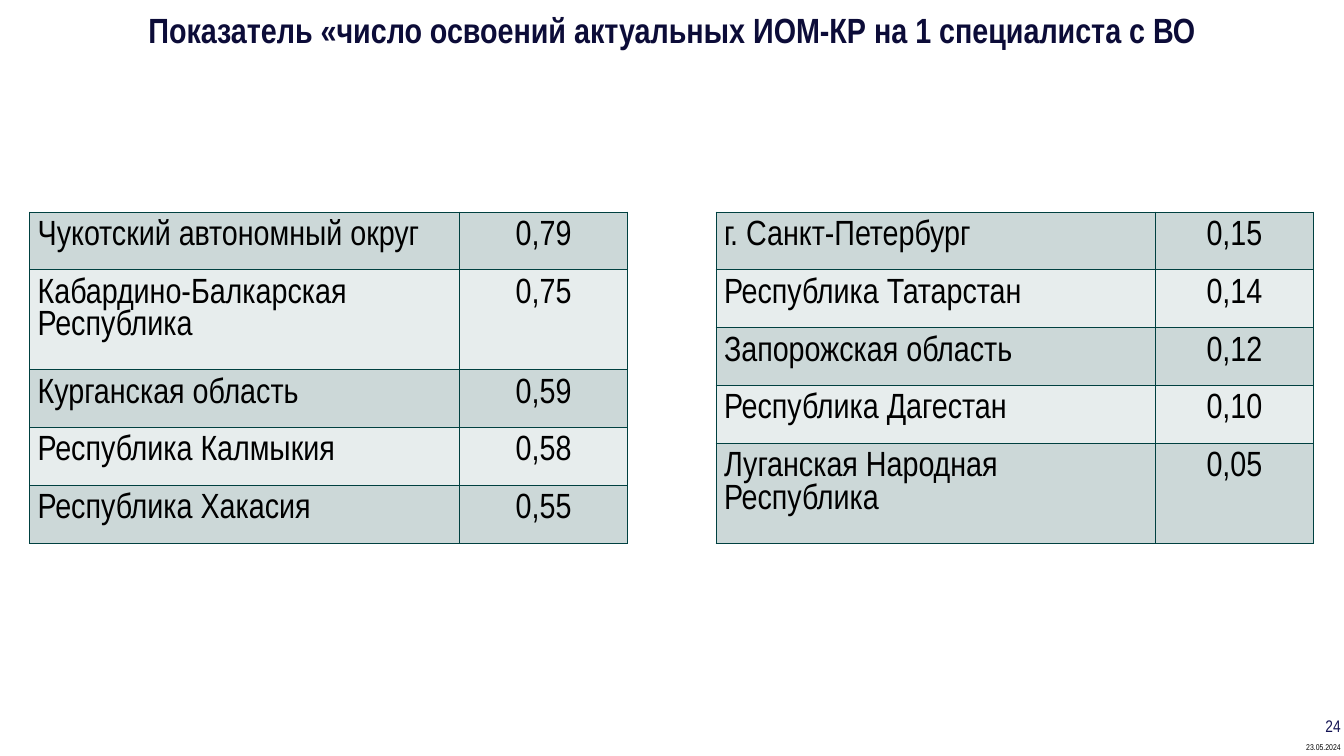
from lxml.etree import SubElement
from pptx import Presentation
from pptx.dml.color import RGBColor
from pptx.enum.text import MSO_ANCHOR, PP_ALIGN
from pptx.oxml.ns import qn
from pptx.util import Pt

COLORS = {"title": "0C0C38", "number": "131354", "text": "000000",
          "border": "004040", "odd": "CCD8D8", "even": "E7EDED"}
FONT = "Arial Narrow"
INSET = 5.67


def write(frame, text, size, color, align, bold=False):
    """Fill a text frame with one formatted paragraph."""
    frame.text = text
    paragraph = frame.paragraphs[0]
    paragraph.alignment = align
    font = paragraph.runs[0].font
    font.name, font.size, font.bold = FONT, Pt(size), bold
    font.color.rgb = RGBColor.from_string(COLORS[color])


def add_borders(cell):
    """Draw a thin line on all four sides; lines must precede the fill."""
    properties = cell._tc.get_or_add_tcPr()
    for side in ("a:lnL", "a:lnR", "a:lnT", "a:lnB"):
        line = SubElement(properties, qn(side), w=str(Pt(0.75)))
        fill = SubElement(line, qn("a:solidFill"))
        SubElement(fill, qn("a:srgbClr"), val=COLORS["border"])


prs = Presentation()
prs.slide_width, prs.slide_height = Pt(960), Pt(540)
slide = prs.slides.add_slide(prs.slide_layouts[6])

# Title, slide number and date: text, place, inset, bottom inset, style
labels = [
    ("Показатель «число освоений актуальных ИОМ‑КР на 1 специалиста с ВО",
     (12.24, 0, 935.28, 41.8), INSET, INSET, MSO_ANCHOR.MIDDLE, True,
     (25, "title", PP_ALIGN.CENTER, True)),
    ("24", (929.5, 508.3, 31, 17.3), 2.83, 0, MSO_ANCHOR.MIDDLE, True,
     (12, "number", PP_ALIGN.RIGHT)),
    ("23.05.2024", (929.5, 527, 31, 13), 2.83, 2.83, MSO_ANCHOR.TOP, False,
     (6, "text", PP_ALIGN.RIGHT)),
]
for text, place, inset, bottom, anchor, wrap, style in labels:
    frame = slide.shapes.add_textbox(*map(Pt, place)).text_frame
    frame.margin_left = frame.margin_right = frame.margin_top = Pt(inset)
    frame.margin_bottom = Pt(bottom)
    frame.vertical_anchor = anchor
    frame.word_wrap = wrap
    write(frame, text, *style)

# Leading regions on the left, trailing ones on the right
rankings = [
    (21.3, (307, 120), [
        ("Чукотский автономный округ", "0,79"),
        ("Кабардино-Балкарская Республика", "0,75"),
        ("Курганская область", "0,59"),
        ("Республика Калмыкия", "0,58"),
        ("Республика Хакасия", "0,55"),
    ]),
    (511.5, (313.5, 113.5), [
        ("г. Санкт-Петербург", "0,15"),
        ("Республика Татарстан", "0,14"),
        ("Запорожская область", "0,12"),
        ("Республика Дагестан", "0,10"),
        ("Луганская Народная Республика", "0,05"),
    ]),
]
ROW_HEIGHT = 29.5
for left, widths, regions in rankings:
    table = slide.shapes.add_table(
        len(regions), 2, Pt(left), Pt(151.4), Pt(sum(widths)),
        Pt(ROW_HEIGHT * len(regions))).table
    table.first_row = table.horz_banding = False
    for column, width in zip(table.columns, widths):
        column.width = Pt(width)
    for row, region in enumerate(regions):
        for col, text in enumerate(region):
            cell = table.cell(row, col)
            cell.margin_left = cell.margin_right = Pt(INSET)
            cell.margin_top = cell.margin_bottom = Pt(INSET)
            add_borders(cell)
            cell.fill.solid()
            cell.fill.fore_color.rgb = RGBColor.from_string(
                COLORS["even" if row % 2 else "odd"])
            write(cell.text_frame, text, 25, "text",
                  PP_ALIGN.CENTER if col else PP_ALIGN.LEFT)

prs.save("out.pptx")
